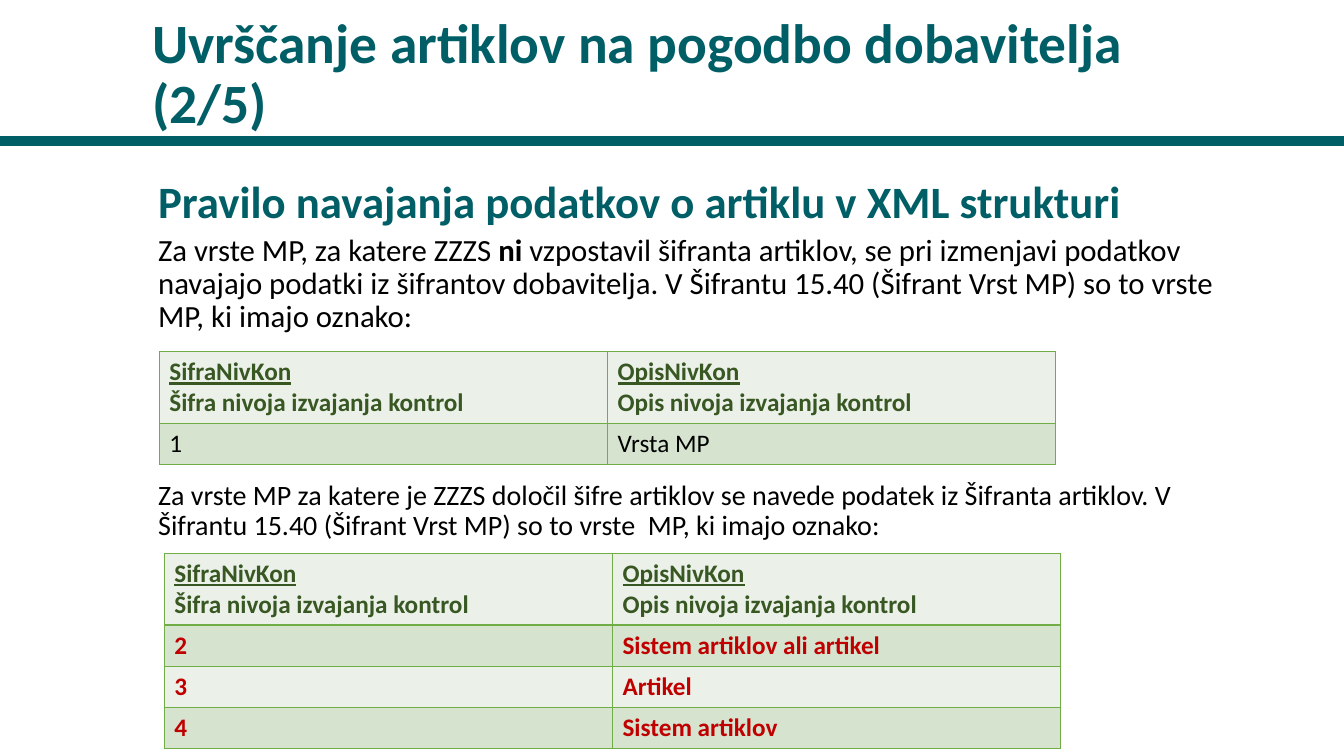
from lxml.etree import SubElement
from pptx import Presentation
from pptx.dml.color import RGBColor
from pptx.enum.shapes import MSO_CONNECTOR
from pptx.enum.text import MSO_ANCHOR, MSO_AUTO_SIZE, PP_ALIGN
from pptx.oxml.ns import qn
from pptx.util import Inches, Pt

TEAL, BLACK, DARK_GREEN, RED = "005E66", "000000", "385723", "C00000"
BORDER, BANDS = "70AD47", ("EBF1E9", "D5E3CF")


def rgb(color):
    return RGBColor.from_string(color)


def add_run(p, text, size, color, **formats):
    r = p.add_run()
    r.text = text
    r.font.color.rgb = rgb(color)
    for name, value in {"name": "Calibri", "size": Pt(size), **formats}.items():
        setattr(r.font, name, value)


prs = Presentation()
prs.slide_width, prs.slide_height = Inches(13.33), Inches(7.5)
s = prs.slides.add_slide(prs.slide_layouts[5])

# Rule under the title
rule = s.shapes.add_connector(
    MSO_CONNECTOR.STRAIGHT, 0, Inches(1.4), prs.slide_width, Inches(1.4))
rule.line.color.rgb = rgb(TEAL)
rule.line.width = Pt(7)
SubElement(rule._element.spPr, qn("a:effectLst"))

# Title
title = s.shapes.title
title.left, title.top = Inches(1.41), Inches(0.15)
title.width, title.height = Inches(11.01), Inches(1.24)
tf = title.text_frame
tf.word_wrap = True
tf.auto_size = MSO_AUTO_SIZE.NONE
tf.vertical_anchor = MSO_ANCHOR.BOTTOM
p = tf.paragraphs[0]
p.alignment = PP_ALIGN.LEFT
p.line_spacing = 0.9
add_run(p, "Uvrščanje artiklov na pogodbo dobavitelja (2/5)", 39.6, TEAL, bold=True)

# Body text; the last paragraph leaves room for the first table
body = [
    (0, 32, TEAL, [("Pravilo navajanja podatkov o artiklu v XML strukturi", True)]),
    (5, 22, BLACK, [
        ("Za vrste MP, za katere ZZZS ", False),
        ("ni", True),
        (" vzpostavil šifranta artiklov, se pri izmenjavi podatkov navajajo "
         "podatki iz šifrantov dobavitelja. V Šifrantu 15.40 (Šifrant Vrst MP) "
         "so to vrste  MP, ki imajo oznako:", False)]),
    (105, 20, BLACK, [
        ("Za vrste MP za katere je ZZZS določil šifre artiklov se navede podatek "
         "iz Šifranta artiklov. V Šifrantu 15.40 (Šifrant Vrst MP) so to vrste  MP, "
         "ki imajo oznako:", False)]),
]
tf = s.shapes.add_textbox(
    Inches(1.47), Inches(1.73), Inches(10.92), Inches(4.76)).text_frame
tf.word_wrap = True
for i, (space, size, color, runs) in enumerate(body):
    p = tf.add_paragraph() if i else tf.paragraphs[0]
    p.line_spacing = 0.9
    p.space_before = Pt(space)
    for text, bold in runs:
        add_run(p, text, size, color, bold=bold)

# Tables of control levels
header = [("SifraNivKon", "Šifra nivoja izvajanja kontrol"),
          ("OpisNivKon", "Opis nivoja izvajanja kontrol")]
tables = [
    (1.58, 3.49, BLACK, False, [("1", "Vrsta MP")]),
    (1.63, 5.49, RED, True, [("2", "Sistem artiklov ali artikel"),
                             ("3", "Artikel"),
                             ("4", "Sistem artiklov")]),
]
for left, top, color, bold, levels in tables:
    height = 0.71 + 0.41 * len(levels)
    table = s.shapes.add_table(
        len(levels) + 1, 2, Inches(left), Inches(top),
        Inches(8.89), Inches(height)).table
    for i, row in enumerate(table.rows):
        row.height = Inches(0.41 if i else 0.71)
        for j, cell in enumerate(row.cells):
            tcPr = cell._tc.get_or_add_tcPr()
            for side in ("a:lnL", "a:lnR", "a:lnT", "a:lnB"):
                ln = SubElement(tcPr, qn(side), w=str(Pt(1)))
                SubElement(SubElement(ln, qn("a:solidFill")),
                           qn("a:srgbClr"), val=BORDER)
            cell.fill.solid()
            cell.fill.fore_color.rgb = rgb(BANDS[i % 2])
            tf = cell.text_frame
            p = tf.paragraphs[0]
            if i:
                add_run(p, levels[i - 1][j], 18, color, bold=bold)
            else:
                field, label = header[j]
                add_run(p, field, 18, DARK_GREEN, bold=True, underline=True)
                add_run(tf.add_paragraph(), label, 18, DARK_GREEN, bold=True)

prs.save("out.pptx")
